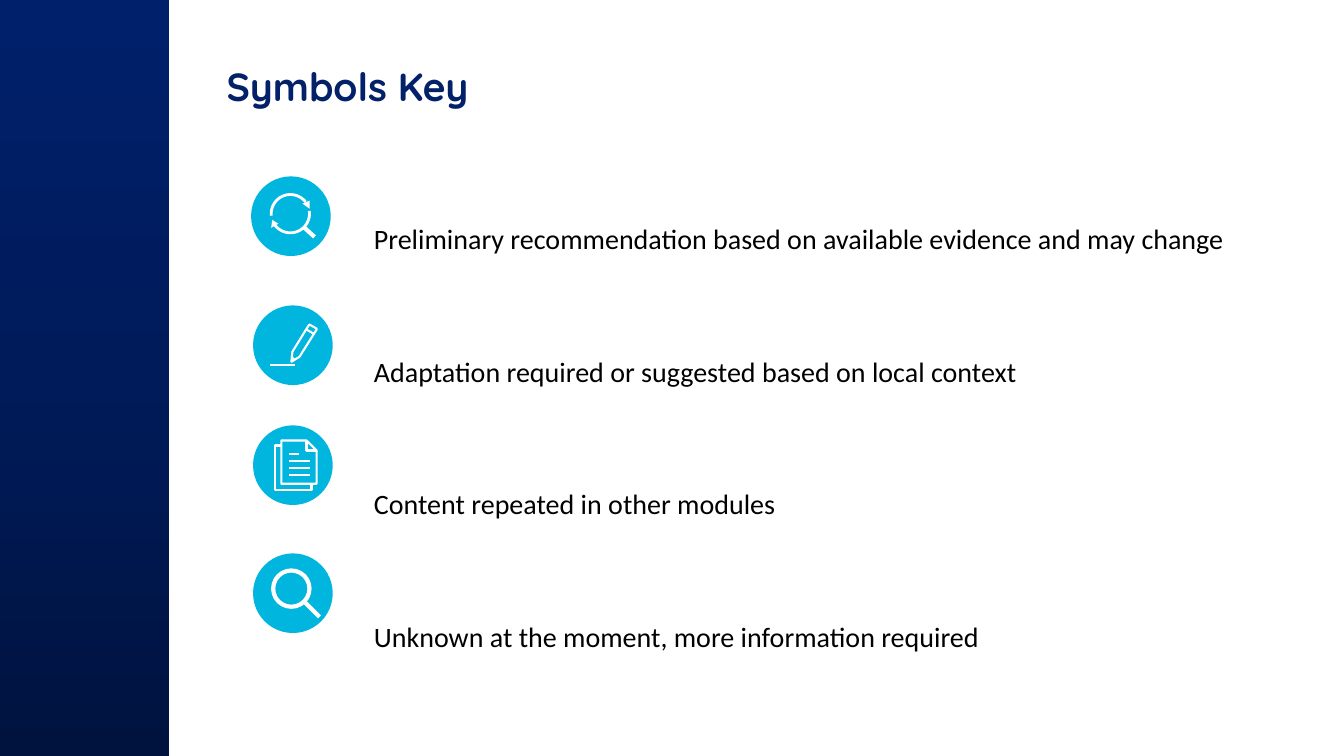
from copy import deepcopy
from math import cos, radians, sin

from lxml import etree
from pptx import Presentation
from pptx.dml.color import RGBColor
from pptx.enum.shapes import MSO_CONNECTOR, MSO_SHAPE
from pptx.enum.text import MSO_ANCHOR
from pptx.oxml.ns import qn
from pptx.util import Pt

PX = 9144
RECTANGLE = MSO_SHAPE.RECTANGLE
OVAL = MSO_SHAPE.OVAL
STRAIGHT = MSO_CONNECTOR.STRAIGHT
TOP = MSO_ANCHOR.TOP

NAVY = RGBColor(0x02, 0x21, 0x69)
CYAN = RGBColor(0x00, 0xB5, 0xDE)
WHITE = RGBColor(0xFF, 0xFF, 0xFF)
BLACK = RGBColor(0x00, 0x00, 0x00)
BAND_STOPS = (
    (0, RGBColor(0x00, 0x13, 0x3F)),
    (0.5, RGBColor(0x00, 0x1B, 0x5A)),
    (1, RGBColor(0x00, 0x20, 0x6B)),
)

BADGE = 79
THIN = 1.5
MEDIUM = 2
THICK = 3

MEANINGS = (
    "Preliminary recommendation based on available evidence and may change",
    "Adaptation required or suggested based on local context",
    "Content repeated in other modules",
    "Unknown at the moment, more information required",
)


def emu(*lengths):
    return [round(length * PX) for length in lengths]


def draw_line(page, left, top, start, end, weight):
    line = page.shapes.add_connector(
        STRAIGHT,
        *emu(left + start[0], top + start[1], left + end[0], top + end[1]),
    )
    line.line.color.rgb = WHITE
    line.line.width = Pt(weight)
    etree.SubElement(line._element.spPr, qn("a:effectLst"))


def draw_outline(page, left, top, points, weight=THIN, closed=False, solid=False):
    corners = [emu(left + x, top + y) for x, y in points]
    builder = page.shapes.build_freeform(*corners[0], scale=1.0)
    builder.add_line_segments(corners[1:], close=closed)
    outline = builder.convert_to_shape()
    outline.shadow.inherit = False
    if solid:
        outline.fill.solid()
        outline.fill.fore_color.rgb = WHITE
        outline.line.fill.background()
    else:
        outline.fill.background()
        outline.line.color.rgb = WHITE
        outline.line.width = Pt(weight)


def draw_oval(page, left, top, size):
    oval = page.shapes.add_shape(OVAL, *emu(left, top, size, size))
    oval.shadow.inherit = False
    return oval


def arc_points(centre_x, centre_y, radius, first, last):
    angles = [radians(first + (last - first) * step / 40) for step in range(41)]
    return [(centre_x + radius * cos(a), centre_y + radius * sin(a)) for a in angles]


def draw_review_icon(page, left, top):
    for first, last in ((174, 322), (-8, 145)):
        draw_outline(page, left, top, arc_points(39, 37, 19, first, last), MEDIUM)
    for arrowhead in (((51, 27), (58, 32), (58, 24)), ((27, 47), (21, 43), (20, 51))):
        draw_outline(page, left, top, arrowhead, closed=True, solid=True)
    draw_line(page, left, top, (53, 51), (63, 60), THICK)


def draw_pencil_icon(page, left, top):
    pencil = ((46, 51), (38, 56), (39, 46), (55, 20), (56, 19), (63, 23), (63, 24))
    draw_outline(page, left, top, pencil, closed=True)
    for start, end in (
        ((53, 24), (60, 28)),
        ((39, 52), (41, 54)),
        ((17, 59), (42, 59)),
    ):
        draw_line(page, left, top, start, end, THIN)


def draw_pages_icon(page, left, top):
    back_sheet = ((28, 20), (22, 20), (22, 64), (58, 64), (58, 58))
    front_sheet = ((28, 15), (53, 15), (63, 25), (63, 58), (28, 58))
    fold = ((53, 15), (53, 25), (63, 25))
    draw_outline(page, left, top, back_sheet)
    draw_outline(page, left, top, front_sheet, closed=True)
    draw_outline(page, left, top, fold)
    for row, end in enumerate((46, 56, 56, 56)):
        y = 28 + 7 * row
        draw_line(page, left, top, (36, y), (end, y), THIN)


def draw_magnifier_icon(page, left, top):
    lens = draw_oval(page, left + 20, top + 17, 36)
    lens.fill.background()
    lens.line.color.rgb = WHITE
    lens.line.width = Pt(THICK)
    draw_line(page, left, top, (51, 48), (66, 63), THICK)


def add_badge(page, left, top, draw_icon):
    badge = draw_oval(page, left, top, BADGE)
    badge.fill.solid()
    badge.fill.fore_color.rgb = CYAN
    badge.line.fill.background()
    draw_icon(page, left, top)


def add_side_band(page, left, top, width, height):
    band = page.shapes.add_shape(RECTANGLE, *emu(left, top, width, height))
    band.shadow.inherit = False
    band.line.fill.background()
    band.fill.gradient()
    stops = band._element.spPr.find(".//" + qn("a:gsLst"))
    stops.insert(1, deepcopy(stops[0]))
    for stop, (position, colour) in zip(band.fill.gradient_stops, BAND_STOPS):
        stop.position = position
        stop.color.rgb = colour
    band.fill.gradient_angle = 90


def add_text(page, left, top, width, height, lines, font_name, size, colour, bold=False):
    box = page.shapes.add_textbox(*emu(left, top, width, height))
    frame = box.text_frame
    frame.word_wrap = True
    frame.vertical_anchor = TOP
    frame.text = "\n".join(lines)
    for para in frame.paragraphs:
        for span in para.runs:
            span.font.name = font_name
            span.font.size = Pt(size)
            span.font.color.rgb = colour
            span.font.bold = bold
    return frame


def add_meanings(page, left, top, width, height):
    frame = add_text(page, left, top, width, height, MEANINGS, "Calibri", 20, BLACK)
    for para in frame.paragraphs:
        para.line_spacing = 3.45
        para.space_after = Pt(12)


def build_symbols_key(page):
    add_side_band(page, 0, 0, 168, 750)
    add_text(page, 215, 57, 1000, 92, ["Symbols Key"], "Quicksand", 28, NAVY, True)
    add_meanings(page, 361, 133, 888, 518)
    for left, top, draw_icon in (
        (249, 175, draw_review_icon),
        (251, 303, draw_pencil_icon),
        (251, 422, draw_pages_icon),
        (251, 549, draw_magnifier_icon),
    ):
        add_badge(page, left, top, draw_icon)


def main():
    deck = Presentation()
    deck.slide_width, deck.slide_height = emu(1333, 750)
    build_symbols_key(deck.slides.add_slide(deck.slide_layouts[6]))
    deck.save("out.pptx")


if __name__ == "__main__":
    main()
